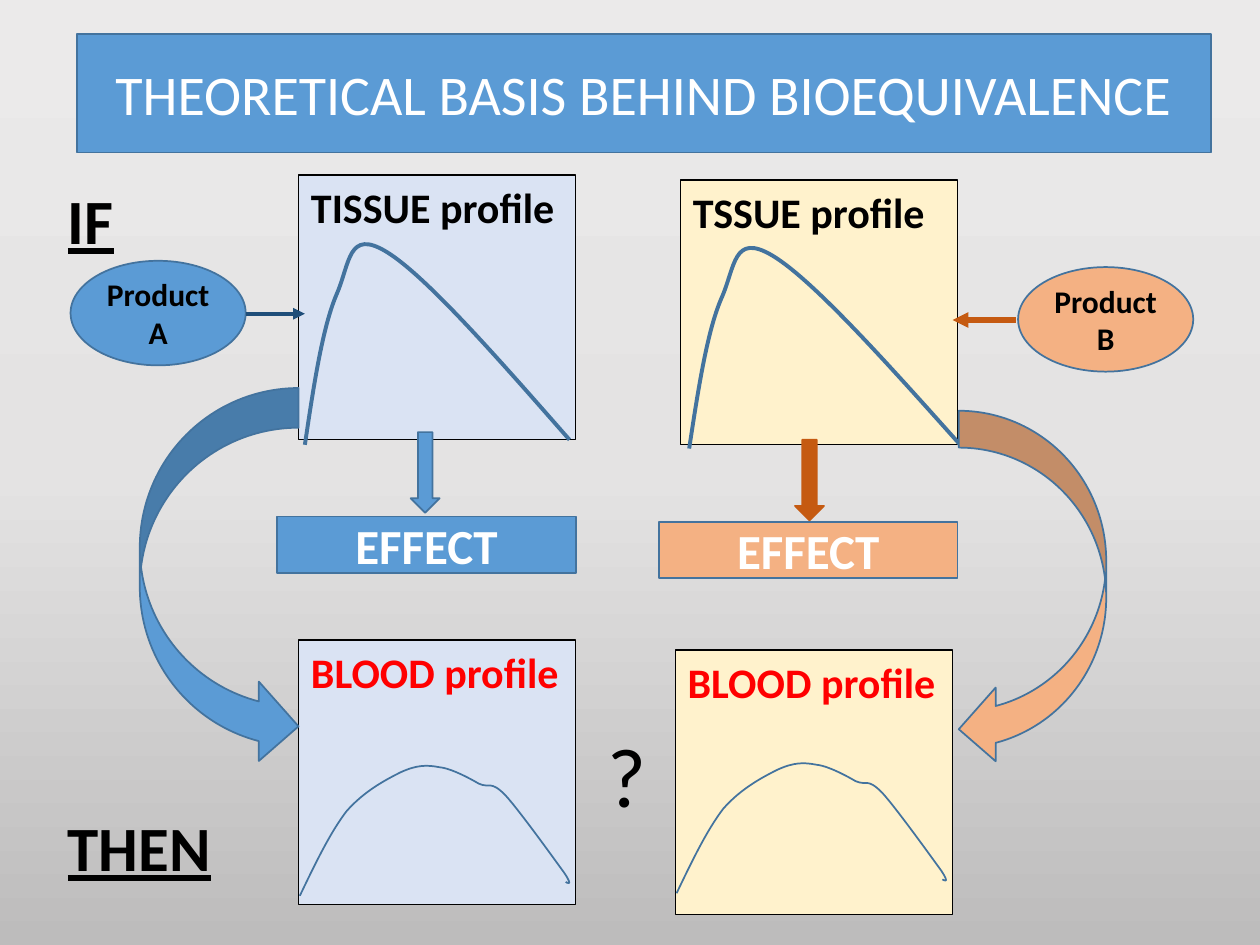
import copy
from dataclasses import dataclass

import pptx
import pptx.dml.color
import pptx.enum.shapes
import pptx.enum.text
import pptx.oxml
import pptx.oxml.ns
import pptx.util

EMU_PER_PX = 9144  # 100 px to the inch
FONT = "Calibri"
COLORS = {
    "blue": "5B9BD5", "outline": "43739E", "navy": "1F4E79",
    "orange": "F4B183", "rust": "C55A11", "pale_blue": "DAE3F3",
    "cream": "FFF2CC", "black": "000000", "white": "FFFFFF", "red": "FF0000",
    "back_top": "EBEAEA", "back_middle": "E4E3E3", "back_bottom": "BDBCBC",
}
SHAPES = pptx.enum.shapes.MSO_SHAPE
ALIGN = pptx.enum.text.PP_ALIGN
ANCHOR = pptx.enum.text.MSO_ANCHOR
NAMESPACE = pptx.oxml.ns.nsdecls("a")

# Bezier chains: a start point, then three points for each segment
TISSUE_CURVE = [(0, 159), (7, 112), (14, 66), (25, 40), (36, 15), (34, -13),
                (65, 6), (96, 25), (153, 90), (210, 155)]
BLOOD_CURVE = [(0, 103), (12, 78), (24, 53), (37, 36), (51, 20), (68, 11),
               (80, 5), (93, -1), (101, -1), (111, 1), (122, 2), (142, 14),
               (142, 14), (151, 18), (151, 11), (163, 23), (174, 35),
               (202, 74), (210, 85), (218, 97), (211, 92), (211, 92)]


@dataclass
class Box:
    left: int
    top: int
    width: int
    height: int

    def emu(self) -> list:
        return [px(v) for v in (self.left, self.top, self.width, self.height)]


@dataclass
class Profile:
    text: str
    text_color: str
    box: Box
    fill: str
    curve: list
    curve_box: Box
    stretch: float
    weight: float


@dataclass
class Block:
    kind: int
    box: Box
    fill: str
    line: str = "outline"
    text: str = ""
    size: int = 18
    text_color: str = "black"
    inset: int = 10


PROFILES = [
    Profile("TISSUE profile", "black", Box(237, 139, 220, 210), "pale_blue",
            TISSUE_CURVE, Box(242, 194, 210, 159), 1, 2.25),
    Profile("TSSUE profile", "black", Box(540, 143, 220, 210), "cream",
            TISSUE_CURVE, Box(547, 197, 214, 159), 1.02, 2.25),
    Profile("BLOOD profile", "red", Box(237, 508, 220, 210), "pale_blue",
            BLOOD_CURVE, Box(238, 608, 214, 103), 1, 1),
    Profile("BLOOD profile", "red", Box(536, 516, 220, 210), "cream",
            BLOOD_CURVE, Box(537, 606, 214, 103), 1, 1),
]
BLOCKS = [
    Block(SHAPES.OVAL, Box(56, 207, 139, 83), "blue", text="Product A", inset=7),
    Block(SHAPES.OVAL, Box(808, 212, 139, 83), "orange", text="Product B", inset=7),
    Block(SHAPES.RECTANGLE, Box(220, 410, 237, 45), "blue",
          text="EFFECT", size=28, text_color="white"),
    Block(SHAPES.RECTANGLE, Box(523, 414, 237, 45), "orange",
          text="EFFECT", size=28, text_color="white"),
    Block(SHAPES.DOWN_ARROW, Box(326, 343, 23, 64), "blue"),
    Block(SHAPES.DOWN_ARROW, Box(631, 349, 23, 64), "rust", "rust"),
    Block(SHAPES.CURVED_RIGHT_ARROW, Box(111, 308, 126, 300), "blue"),
    Block(SHAPES.CURVED_LEFT_ARROW, Box(761, 326, 117, 282), "orange"),
]


def px(value: float) -> int:
    return round(value * EMU_PER_PX)


def rgb(name: str) -> pptx.dml.color.RGBColor:
    return pptx.dml.color.RGBColor.from_string(COLORS[name])


def write(shape, text: str, *, size: int, color: str = "black", bold: bool = False,
          underline: bool = False, align=ALIGN.LEFT, anchor=ANCHOR.TOP,
          inset: int = 10) -> None:
    frame = shape.text_frame
    frame.word_wrap = True
    frame.auto_size = pptx.enum.text.MSO_AUTO_SIZE.NONE
    frame.vertical_anchor = anchor
    frame.margin_left = frame.margin_right = px(inset)
    frame.margin_top = frame.margin_bottom = px(inset // 2)
    paragraph = frame.paragraphs[0]
    paragraph.alignment = align
    run = paragraph.add_run()
    run.text = text
    font = run.font
    font.name, font.size = FONT, pptx.util.Pt(size)
    font.bold, font.underline = bold, underline
    font.color.rgb = rgb(color)


def paint(shape, fill: str, line: str, weight: float = 1) -> None:
    shape.fill.solid()
    shape.fill.fore_color.rgb = rgb(fill)
    shape.line.color.rgb = rgb(line)
    shape.line.width = pptx.util.Pt(weight)


def add_block(slide, block: Block) -> None:
    shape = slide.shapes.add_shape(block.kind, *block.box.emu())
    shape.shadow.inherit = False
    paint(shape, block.fill, block.line)
    if block.text:
        write(shape, block.text, size=block.size, color=block.text_color, bold=True,
              align=ALIGN.CENTER, anchor=ANCHOR.MIDDLE, inset=block.inset)


def add_curve(slide, chain: list, box: Box, stretch: float, weight: float) -> None:
    # A diagonal sets the frame; Bezier segments then take its place
    left, top, width, height = box.emu()
    builder = slide.shapes.build_freeform(left, top)
    builder.add_line_segments([(left + width, top + height)], close=False)
    curve = builder.convert_to_shape()
    outline = curve._element.find(".//" + pptx.oxml.ns.qn("a:path"))
    for child in list(outline):
        outline.remove(child)
    points = [f'<a:pt x="{px(x * stretch)}" y="{px(y)}"/>' for x, y in chain]
    outline.append(pptx.oxml.parse_xml(f"<a:moveTo {NAMESPACE}>{points[0]}</a:moveTo>"))
    for first in range(1, len(points), 3):
        segment = "".join(points[first:first + 3])
        outline.append(pptx.oxml.parse_xml(
            f"<a:cubicBezTo {NAMESPACE}>{segment}</a:cubicBezTo>"))
    curve.shadow.inherit = False
    curve.fill.background()
    curve.line.color.rgb = rgb("outline")
    curve.line.width = pptx.util.Pt(weight)


def add_profile(slide, profile: Profile) -> None:
    box = slide.shapes.add_shape(SHAPES.RECTANGLE, *profile.box.emu())
    box.shadow.inherit = False
    paint(box, profile.fill, "black", 0.75)
    write(box, profile.text, size=24, color=profile.text_color, bold=True)
    add_curve(slide, profile.curve, profile.curve_box, profile.stretch, profile.weight)


def add_arrow(slide, start: int, end: int, y: int, color: str, weight: float) -> None:
    arrow = slide.shapes.add_connector(pptx.enum.shapes.MSO_CONNECTOR.STRAIGHT,
                                       px(start), px(y), px(end), px(y))
    arrow.line.color.rgb = rgb(color)
    arrow.line.width = pptx.util.Pt(weight)
    arrow.line._get_or_add_ln().append(
        pptx.oxml.parse_xml(f'<a:tailEnd {NAMESPACE} type="triangle"/>'))
    arrow._element.spPr.append(pptx.oxml.parse_xml(f"<a:effectLst {NAMESPACE}/>"))


def add_label(slide, text: str, box: Box, size: int, **style) -> None:
    write(slide.shapes.add_textbox(*box.emu()), text, size=size, **style)


def set_background(slide) -> None:
    fill = slide.background.fill
    fill.gradient()
    fill.gradient_angle = 270
    stop_list = slide.element.find(".//" + pptx.oxml.ns.qn("a:gsLst"))
    stop_list.insert(1, copy.deepcopy(stop_list[0]))
    names = ("back_top", "back_middle", "back_bottom")
    for stop, name, position in zip(fill.gradient_stops, names, (0, 0.5, 1)):
        stop.color.rgb = rgb(name)
        stop.position = position


def main() -> None:
    presentation = pptx.Presentation()
    presentation.slide_width, presentation.slide_height = px(1000), px(750)
    slide = presentation.slides.add_slide(presentation.slide_layouts[5])
    set_background(slide)

    # Title banner
    title = slide.shapes.title
    title.left, title.top, title.width, title.height = Box(61, 27, 900, 94).emu()
    paint(title, "blue", "outline")
    write(title, "THEORETICAL BASIS BEHIND BIOEQUIVALENCE", size=32, color="white",
          align=ALIGN.CENTER, anchor=ANCHOR.MIDDLE)

    # Profiles, then products, effects and block arrows
    for profile in PROFILES:
        add_profile(slide, profile)
    for block in BLOCKS:
        add_block(slide, block)

    # Product arrows
    add_arrow(slide, 195, 242, 249, "navy", 2.25)
    add_arrow(slide, 806, 756, 254, "rust", 3)

    # Labels
    add_label(slide, "IF", Box(44, 139, 159, 71), 36, bold=True, underline=True)
    add_label(slide, "THEN", Box(44, 637, 159, 71), 36, bold=True, underline=True)
    add_label(slide, "?", Box(472, 569, 60, 91), 48)

    presentation.save("out.pptx")


if __name__ == "__main__":
    main()
